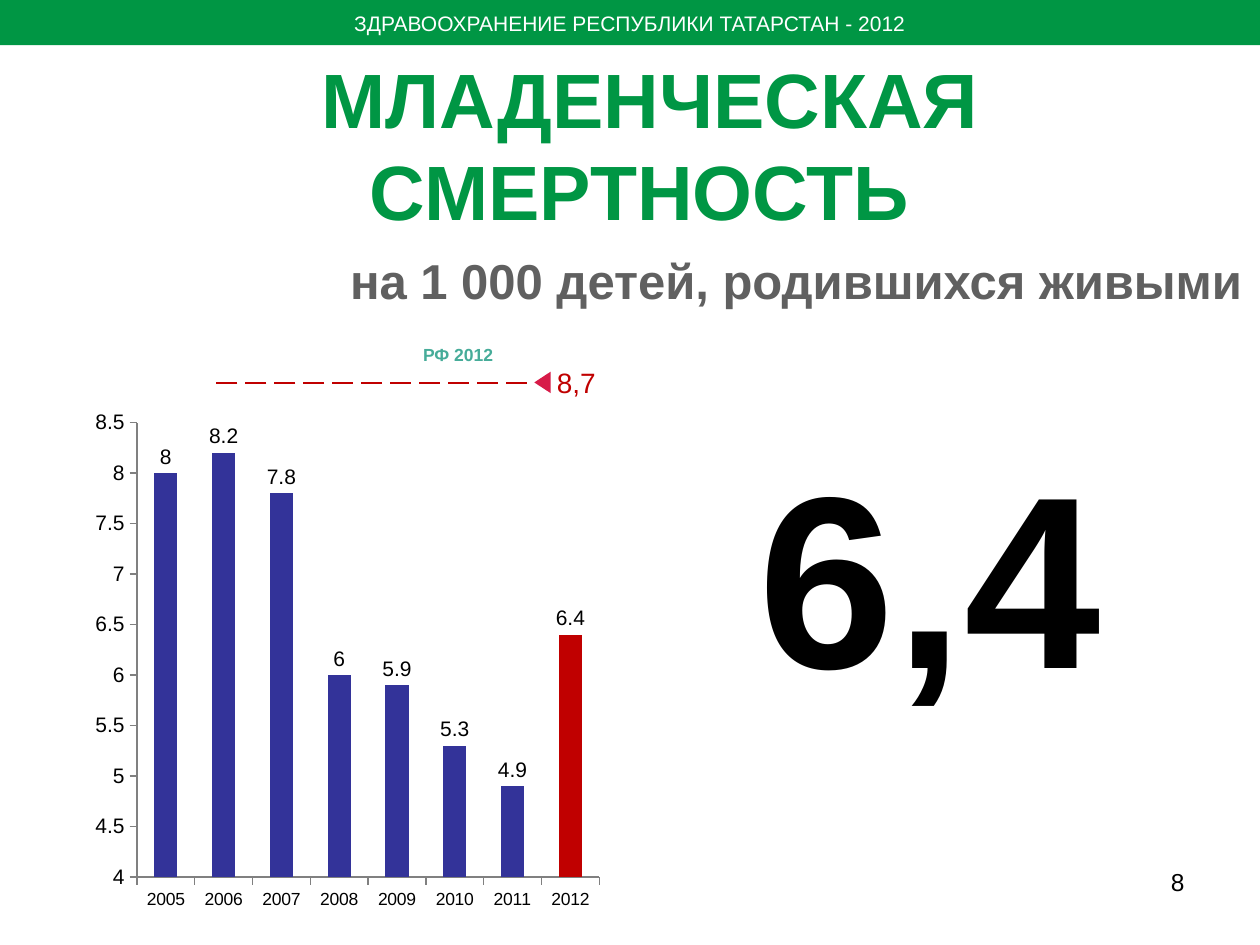
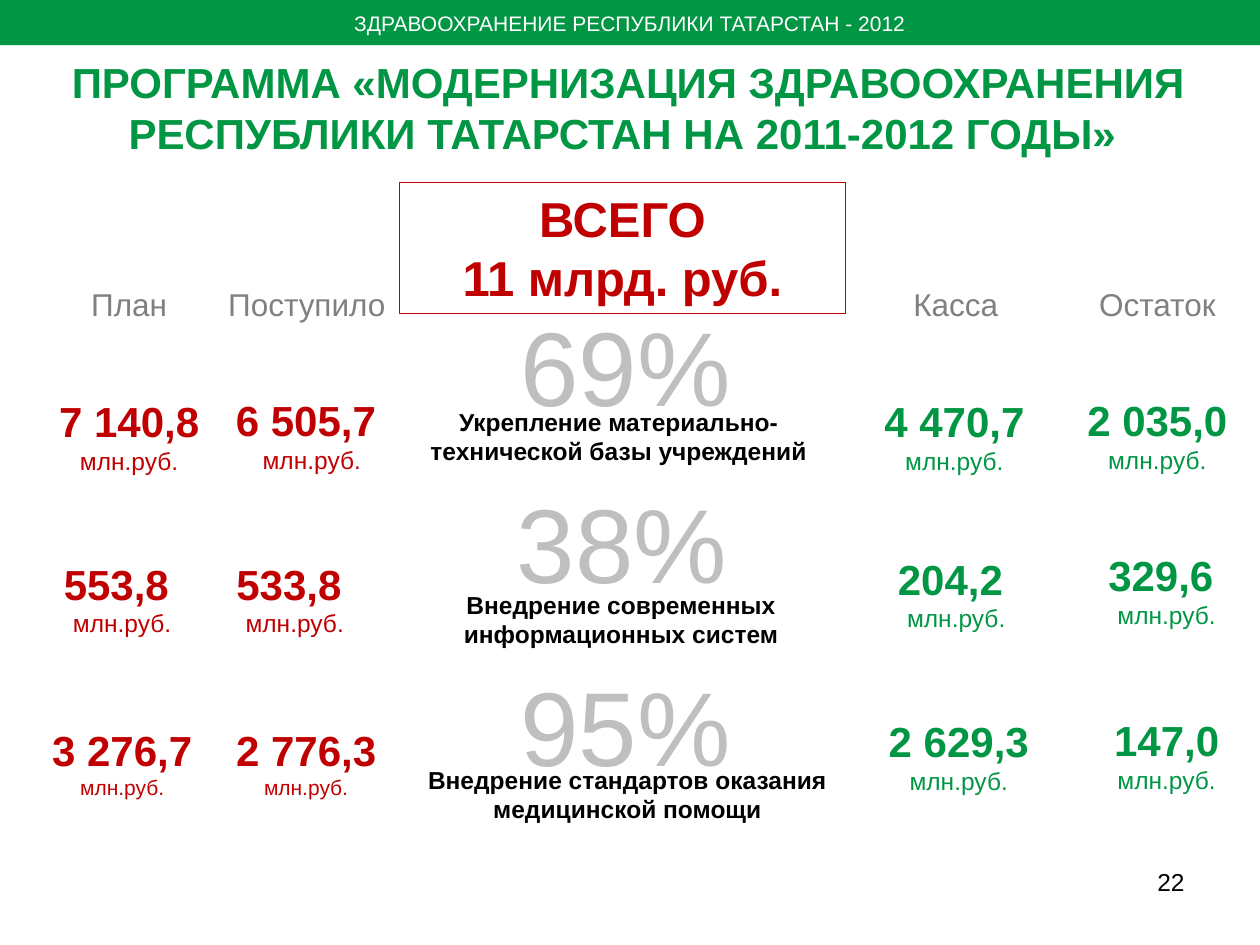
from dataclasses import dataclass

from lxml import etree
from pptx import Presentation
from pptx import util as u
from pptx.chart import data as cd
from pptx.dml.color import RGBColor
from pptx.enum import chart as ch, dml, shapes, text
from pptx.oxml import parse_xml
from pptx.oxml.ns import nsdecls, qn


@dataclass(frozen=True)
class Theme:
    font: str = "Arial"
    green: str = "009644"
    red: str = "C00000"
    arrow: str = "D71B48"
    teal: str = "46AC99"
    bar: str = "333399"
    black: str = "000000"
    white: str = "FFFFFF"
    subtitle: str = "606060"
    heading: str = "808080"
    percent: str = "BFBFBF"
    huge: int = 140
    share: int = 60
    title: int = 44
    large: int = 28
    figure: int = 24
    head: int = 18
    mark: int = 16
    body: int = 14
    small: int = 12
    tiny: int = 10


T = Theme()
LEFT, CENTER, RIGHT = text.PP_ALIGN.LEFT, text.PP_ALIGN.CENTER, text.PP_ALIGN.RIGHT
rgb = RGBColor.from_string


def write(sp, lines, color, align=CENTER, wrap=True, inset=None,
          anchor=text.MSO_ANCHOR.TOP):
    """Fill a shape with paragraphs, each given as (text, size, bold)."""
    tf = sp.text_frame
    tf.word_wrap = wrap
    tf.vertical_anchor = anchor
    if inset is not None:
        tf.margin_left = tf.margin_top = u.Inches(inset)
        tf.margin_right = tf.margin_bottom = u.Inches(inset)
    for i, (words, size, bold) in enumerate(lines):
        p = tf.add_paragraph() if i else tf.paragraphs[0]
        p.alignment = align
        r = p.add_run()
        r.text = words
        r.font.name = T.font
        r.font.size = u.Pt(size)
        r.font.bold = bold
        r.font.color.rgb = rgb(color)


def add_text(s, box, lines, color, **layout):
    sp = s.shapes.add_textbox(*map(u.Inches, box))
    write(sp, lines, color, **layout)
    return sp


prs = Presentation()
prs.slide_width, prs.slide_height = u.Inches(10), u.Inches(7.5)

# Band, title and number shared by both slides
pages = [
    ("8", "МЛАДЕНЧЕСКАЯ СМЕРТНОСТЬ ", T.title, (0.67, 0.36, 8.98, 1.58)),
    ("22", "ПРОГРАММА «МОДЕРНИЗАЦИЯ ЗДРАВООХРАНЕНИЯ "
     "РЕСПУБЛИКИ ТАТАРСТАН НА 2011-2012 ГОДЫ» ", T.figure, (0.03, 0.4, 9.91, 0.91)),
]
for number, title, size, box in pages:
    s = prs.slides.add_slide(prs.slide_layouts[6])
    band = s.shapes.add_shape(shapes.MSO_SHAPE.RECTANGLE, 0, 0,
                              prs.slide_width, u.Inches(0.36))
    band.shadow.inherit = False
    band.fill.solid()
    band.fill.fore_color.rgb = rgb(T.green)
    band.line.fill.background()
    write(band, [("ЗДРАВООХРАНЕНИЕ РЕСПУБЛИКИ ТАТАРСТАН - 2012", T.small, False)],
          T.white, wrap=False, anchor=text.MSO_ANCHOR.MIDDLE)
    add_text(s, box, [(title, size, True)], T.green)
    add_text(s, (7.17, 6.83, 2.33, 0.52), [(number, T.body, False)], T.black, align=RIGHT)

mortality, program = prs.slides

# Infant mortality
s = mortality
rate = add_text(s, (5.92, 3.31, 3.64, 2.46), [("6,4", T.huge, True)], T.black, align=LEFT)
rate.text_frame.paragraphs[0].runs[0].font._element.set("spc", "50")
add_text(s, (2.68, 1.94, 7.35, 0.57),
         [("на 1 000 детей, родившихся живыми", T.large, True)], T.subtitle, align=LEFT)

rates = cd.CategoryChartData()
rates.categories = [str(year) for year in range(2005, 2013)]
rates.add_series("Series 1", (8, 8.2, 7.8, 6, 5.9, 5.3, 4.9, 6.4))
chart = s.shapes.add_chart(ch.XL_CHART_TYPE.COLUMN_CLUSTERED,
                           *map(u.Inches, (0.67, 3.19, 4.17, 4.1)), rates).chart
chart.has_legend = chart.has_title = False
chart.font.name = T.font
chart.font.size = u.Pt(T.head)
chart.font.color.rgb = rgb(T.black)
for axis, size in ((chart.category_axis, T.tiny), (chart.value_axis, T.small)):
    axis.has_major_gridlines = False
    axis.major_tick_mark = ch.XL_TICK_MARK.OUTSIDE
    axis.tick_labels.font.size = u.Pt(size)
    axis.format.line.color.rgb = rgb(T.heading)
    axis.format.line.width = u.Pt(0.75)
axis = chart.value_axis
axis.minimum_scale, axis.maximum_scale, axis.major_unit = 4, 8.5, 0.5

plot = chart.plots[0]
plot.gap_width = 150
plot.vary_by_categories = False
plot.has_data_labels = True
labels = plot.data_labels
labels.show_value = True
labels.position = ch.XL_LABEL_POSITION.OUTSIDE_END
labels.font.size = u.Pt(T.small)
bars = plot.series[0]
for bar, color in ((bars, T.bar), (bars.points[7], T.red)):
    bar.format.fill.solid()
    bar.format.fill.fore_color.rgb = rgb(color)

area = chart._chartSpace.find(".//" + qn("c:plotArea"))
for old in area.findall(qn("c:layout")):
    area.remove(old)
modes = '<c:layoutTarget val="inner"/><c:xMode val="edge"/><c:yMode val="edge"/>'
place = "".join(f'<c:{k} val="{v}"/>'
                for k, v in (("x", 0.1), ("y", 0.04), ("w", 0.88), ("h", 0.88)))
area.insert(0, parse_xml(f'<c:layout {nsdecls("c")}><c:manualLayout>{modes}{place}'
                         '</c:manualLayout></c:layout>'))

# Country level for comparison
arrow = s.shapes.add_shape(shapes.MSO_SHAPE.RIGHT_ARROW,
                           *map(u.Inches, (4.24, 2.95, 0.13, 0.17)))
arrow.adjustments[0] = arrow.adjustments[1] = 1
arrow.rotation = 180
arrow.shadow.inherit = False
arrow.fill.solid()
arrow.fill.fore_color.rgb = rgb(T.arrow)
arrow.line.fill.background()
level = s.shapes.add_connector(shapes.MSO_CONNECTOR.STRAIGHT,
                               *map(u.Inches, (4.18, 3.04, 1.69, 3.04)))
level.line.color.rgb = rgb(T.red)
level.line.width = u.Pt(1.5)
level.line.dash_style = dml.MSO_LINE.LONG_DASH
etree.SubElement(level._element.spPr, qn("a:effectLst"))
add_text(s, (4.42, 2.9, 0.4, 0.27), [("8,7", T.mark, False)], T.red, align=LEFT,
         wrap=False, inset=0, anchor=text.MSO_ANCHOR.MIDDLE)
add_text(s, (3.26, 2.65, 0.76, 0.37), [("РФ 2012", T.tiny, True)], T.teal, align=LEFT,
         wrap=False, inset=0.1)

# Modernisation programme
s = program
measures = [
    ("69%", 4.02, 2.34, "Укрепление материально-технической базы учреждений", 3.14, 3.18),
    ("38%", 3.99, 3.75, "Внедрение современных информационных систем", 3.16, 4.63),
    ("95%", 4.02, 5.2, "Внедрение стандартов оказания медицинской помощи", 3.21, 6.02),
]
for share, share_x, share_y, name, name_x, name_y in measures:
    add_text(s, (share_x, share_y, 1.89, 1.11), [(share, T.share, False)],
             T.percent, wrap=False)
    add_text(s, (name_x, name_y, 3.54, 0.57), [(name, T.body, True)], T.black)

total = s.shapes.add_shape(shapes.MSO_SHAPE.RECTANGLE,
                           *map(u.Inches, (3.17, 1.45, 3.54, 1.04)))
total.shadow.inherit = False
total.fill.background()
total.line.color.rgb = rgb(T.red)
total.line.width = u.Pt(0.75)
write(total, [("ВСЕГО", T.large, True), ("11 млрд. руб.", T.large, True)], T.red)

# Each column: heading, its left and width, colour, then (amount, left, top, width, unit size)
columns = [
    ("План", 0.2, 1.65, T.red, [
        ("7 140,8", 0.24, 3.09, 1.57, T.body),
        ("553,8 ", 0.14, 4.38, 1.66, T.body),
        ("3 276,7", 0.1, 5.7, 1.74, T.small)]),
    ("Поступило", 1.61, 1.65, T.red, [
        ("6 505,7 ", 1.69, 3.08, 1.57, T.body),
        ("533,8 ", 1.51, 4.38, 1.66, T.body),
        ("2 776,3", 1.56, 5.7, 1.74, T.small)]),
    ("Касса", 6.64, 1.89, T.green, [
        ("4 470,7", 6.83, 3.09, 1.49, T.body),
        ("204,2 ", 6.86, 4.34, 1.46, T.body),
        ("2 629,3", 6.86, 5.63, 1.5, T.body)]),
    ("Остаток", 8.24, 1.89, T.green, [
        ("2 035,0", 8.44, 3.08, 1.49, T.body),
        ("329,6 ", 8.53, 4.31, 1.46, T.body),
        ("147,0", 8.51, 5.62, 1.5, T.body)]),
]
for heading, x, width, color, amounts in columns:
    add_text(s, (x, 2.21, width, 0.4), [(heading, T.head, False)], T.heading)
    for amount, left, top, w, unit in amounts:
        add_text(s, (left, top, w, 0.74),
                 [(amount, T.figure, True), ("млн.руб.", unit, False)], color)

prs.save("out.pptx")
